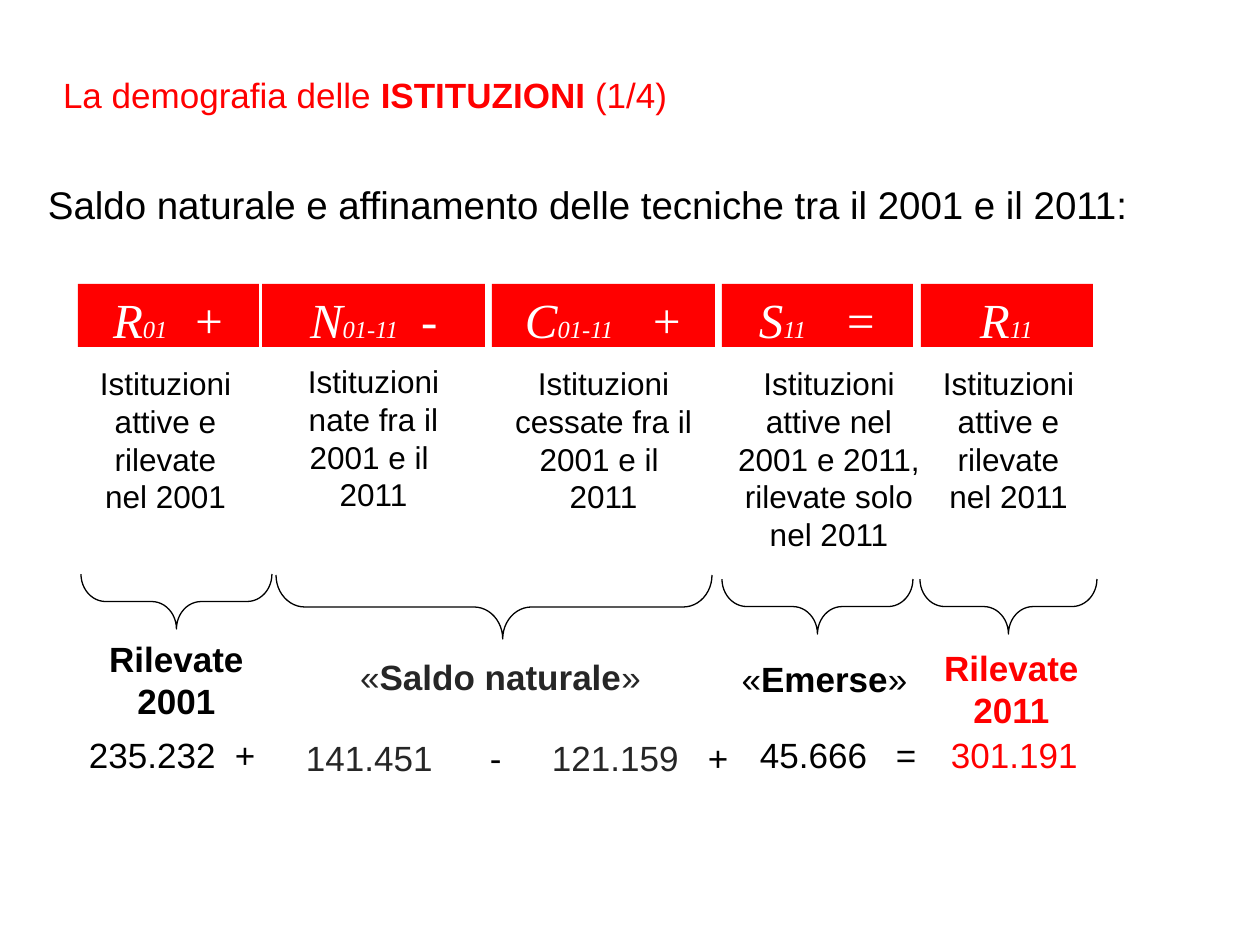
from dataclasses import dataclass
from lxml.etree import SubElement
from pptx import Presentation
from pptx.dml.color import RGBColor
from pptx.enum.shapes import MSO_SHAPE
from pptx.enum.text import MSO_ANCHOR, PP_ALIGN
from pptx.oxml.ns import qn
from pptx.util import Emu, Pt

RED, BLACK, GREY, WHITE = "FF0000", "000000", "262626", "FFFFFF"
PAD = 13  # side margin of a text box


def px(n: int) -> Emu:
    return Emu(n * 914400 // 126)


def color(code: str) -> RGBColor:
    return RGBColor.from_string(code)


@dataclass
class Run:
    text: str
    size: int = 20
    hue: str = BLACK
    bold: bool = False


@dataclass
class Term:
    """One column: red symbol box, description and value."""
    left: int
    width: int
    sign: str
    sub: str
    op: str
    sign_x: int   # where the symbol and its operator start
    op_x: int
    note: str
    note_box: tuple[int, int, int]   # left, top, width
    value: str
    hue: str
    value_x: int  # where the value and its operator start
    value_op: int
    value_y: int


@dataclass
class Group:
    """A brace and the label below it."""
    box: tuple[int, int, int, int]
    tip: float
    label: tuple[int, int, int, int]
    runs: list[Run]


TERMS = [
    Term(78, 181, "R", "01", "+", 113, 192,
         "Istituzioni attive e rilevate nel 2001", (80, 358, 171),
         "235.232", BLACK, 89, 235, 727),
    Term(262, 223, "N", "01-11", "-", 310, 421,
         "Istituzioni nate fra il 2001 e il \n2011", (262, 356, 223),
         "141.451", GREY, 306, 490, 730),
    Term(492, 223, "C", "01-11", "+", 525, 650,
         "Istituzioni cessate fra il 2001 e il \n2011", (492, 358, 223),
         "121.159", GREY, 552, 708, 730),
    Term(722, 191, "S", "11", "=", 759, 844,
         "Istituzioni attive nel 2001 e 2011, rilevate solo nel 2011",
         (723, 358, 212), "45.666", BLACK, 760, 896, 727),
    Term(921, 172, "R", "11", "", 980, 0,
         "Istituzioni attive e rilevate nel 2011", (923, 358, 171),
         "301.191", RED, 951, 0, 727),
]

GROUPS = [
    Group((81, 574, 191, 55), 0.5, (94, 631, 165, 97),
          [Run("Rilevate\n2001", bold=True)]),
    Group((276, 575, 436, 64), 0.52, (317, 649, 367, 55),
          [Run("«", hue=GREY), Run("Saldo naturale", hue=GREY, bold=True),
           Run("»", hue=GREY)]),
    Group((722, 579, 191, 55), 0.5, (726, 651, 197, 55),
          [Run("«"), Run("Emerse", bold=True), Run("»")]),
    Group((920, 579, 177, 55), 0.5, (929, 640, 165, 97),
          [Run("Rilevate\n2011", hue=RED, bold=True)]),
]


def write(shape, runs: list[Run], *, font: str = "Arial",
          italic: bool = False, align=PP_ALIGN.LEFT, anchor=MSO_ANCHOR.TOP,
          side: int = PAD, top: int = 6, right: int = PAD,
          tab: int = 0) -> None:
    frame = shape.text_frame
    frame.word_wrap = True
    frame.vertical_anchor = anchor
    frame.margin_left, frame.margin_right = px(side), px(right)
    frame.margin_top = frame.margin_bottom = px(top)
    para = frame.paragraphs[0]
    for run in runs:
        for i, line in enumerate(run.text.split("\n")):
            if i:
                para = frame.add_paragraph()
            part = para.add_run()
            part.text = line
            part.font.name, part.font.size = font, Pt(run.size)
            part.font.bold, part.font.italic = run.bold, italic
            part.font.color.rgb = color(run.hue)
    for para in frame.paragraphs:
        para.alignment = align
        if tab:
            tabs = SubElement(para._p.get_or_add_pPr(), qn("a:tabLst"))
            SubElement(tabs, qn("a:tab"), pos=str(px(tab)), algn="l")


def label(slide, box: tuple[int, int, int, int], runs: list[Run],
          **style) -> None:
    write(slide.shapes.add_textbox(*map(px, box)), runs, **style)


def brace(slide, group: Group) -> None:
    x, y, w, h = group.box
    # A left brace turned to point down: its sides swap about the centre
    turned = (x + (w - h) // 2, y + (h - w) // 2, h, w)
    shape = slide.shapes.add_shape(MSO_SHAPE.LEFT_BRACE, *map(px, turned))
    shape.rotation = 270
    shape.adjustments[0], shape.adjustments[1] = 0.45, group.tip
    shape.shadow.inherit = False
    shape.fill.background()
    shape.line.color.rgb = color(BLACK)
    shape.line.width = Pt(0.75)


def column(slide, term: Term) -> None:
    # Symbol box
    box = slide.shapes.add_shape(
        MSO_SHAPE.RECTANGLE, px(term.left), px(284), px(term.width), px(63))
    box.shadow.inherit = False
    box.fill.solid()
    box.fill.fore_color.rgb = color(RED)
    box.line.fill.background()
    runs = [Run(term.sign, 28, WHITE), Run(term.sub, 14, WHITE)]
    if term.op:
        runs.append(Run("\t" + term.op, 28, WHITE))
    write(box, runs, font="Times New Roman", italic=True, right=0,
          side=term.sign_x - term.left, tab=max(term.op_x - term.sign_x, 0))

    # Description
    x, y, w = term.note_box
    label(slide, (x, y, w, 217), [Run(term.note, 18)], align=PP_ALIGN.CENTER)

    # Value and operator, in a box wide enough for one line
    runs = [Run(term.value, hue=term.hue)]
    if term.op:
        runs.append(Run("\t" + term.op))
    label(slide, (term.value_x - PAD, term.value_y, 250, 55), runs,
          tab=max(term.value_op - term.value_x, 0))


def main() -> None:
    deck = Presentation()
    deck.slide_width, deck.slide_height = px(1260), px(945)
    slide = deck.slides.add_slide(deck.slide_layouts[5])

    # Title and opening line
    title = slide.shapes.title
    title.left, title.top, title.width, title.height = map(
        px, (63, 16, 1143, 100))
    write(title, [Run("La demografia delle ", hue=RED),
                  Run("ISTITUZIONI ", hue=RED, bold=True),
                  Run("(1/4)", hue=RED)],
          anchor=MSO_ANCHOR.BOTTOM, side=0, right=0, top=0)
    label(slide, (35, 175, 1171, 59),
          [Run("Saldo naturale e affinamento delle tecniche "
               "tra il 2001 e il 2011:", 22)])

    # Equation columns, then the braces that group them
    for term in TERMS:
        column(slide, term)
    for group in GROUPS:
        brace(slide, group)
        label(slide, group.label, group.runs, align=PP_ALIGN.CENTER)

    deck.save("out.pptx")


if __name__ == "__main__":
    main()
